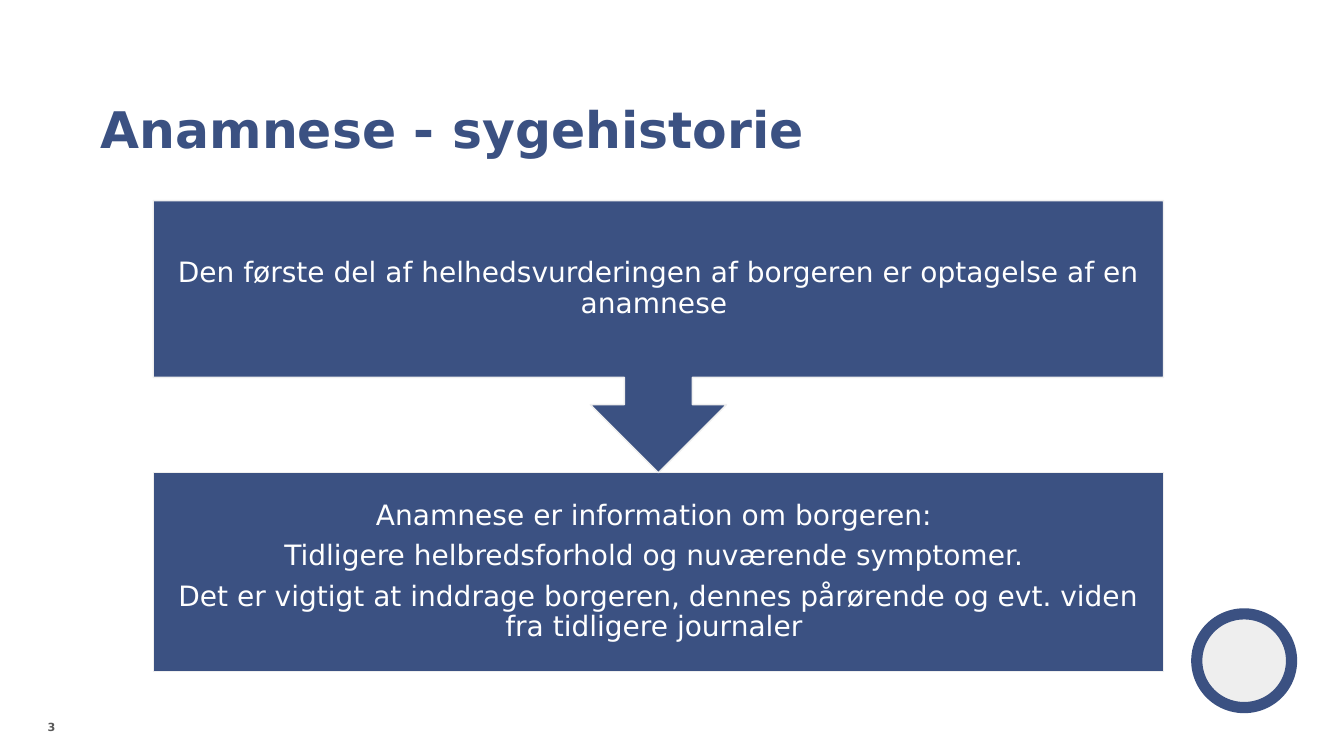
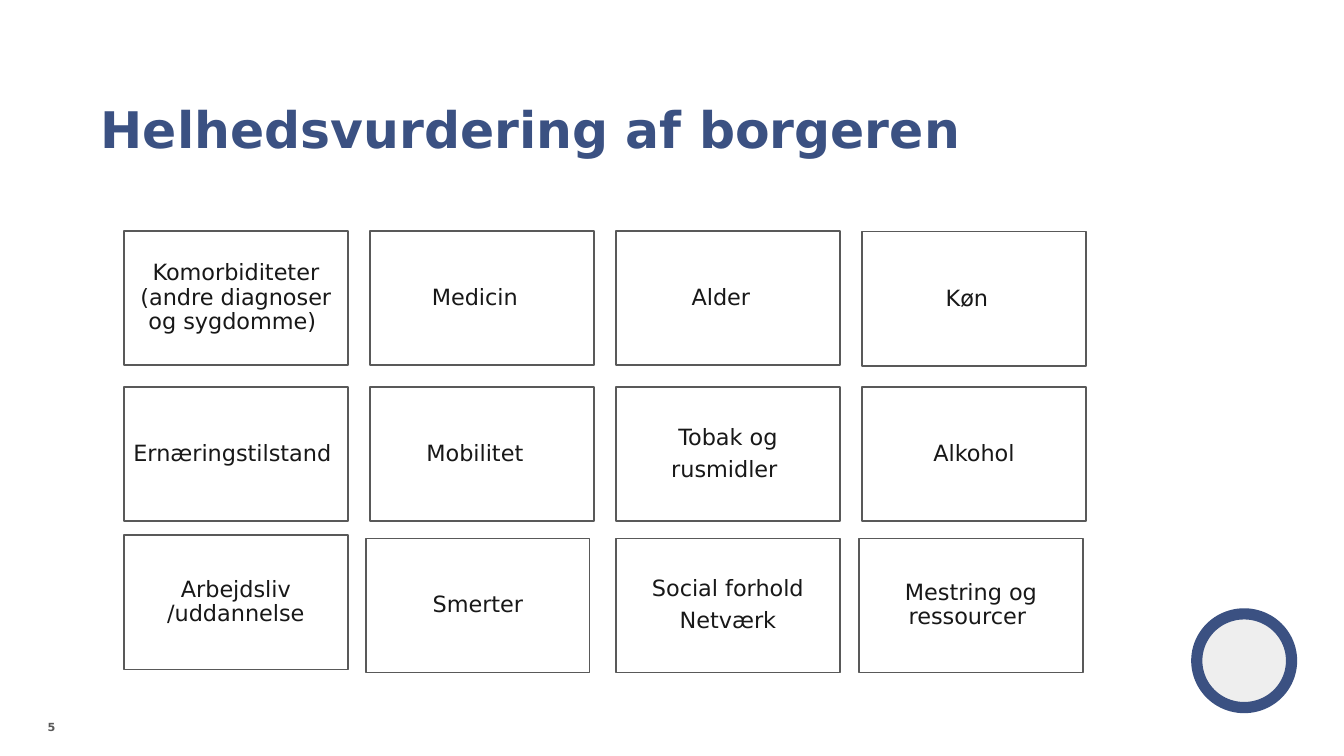
from pptx import Presentation
from pptx.dml.color import RGBColor
from pptx.enum.shapes import MSO_SHAPE as Shape
from pptx.enum.text import MSO_ANCHOR as Anchor, PP_ALIGN as Align
from pptx.util import Inches, Pt

# Shared style
FONT = "DejaVu Sans"
BLUE = RGBColor(0x3B, 0x51, 0x82)
PALE = RGBColor(0xEF, 0xEF, 0xEF)
BADGE = RGBColor(0xEE, 0xEE, 0xEE)
GREY = RGBColor(0x59, 0x59, 0x59)
INK = RGBColor(0x18, 0x18, 0x18)
WHITE = RGBColor(0xFF, 0xFF, 0xFF)

# Slide 1: shape, top, height and paragraphs of each step
HISTORY_TITLE, HISTORY_PAGE = "Anamnese - sygehistorie", "3"
STEP_LEFT, STEP_WIDTH = 1.52, 10.02
STEPS = [
    (Shape.RECTANGLE, 4.69, 1.97, [
        "Anamnese er information om borgeren: ",
        "Tidligere helbredsforhold og nuværende symptomer. ",
        "Det er vigtigt at inddrage borgeren, dennes pårørende og evt. viden "
        "fra tidligere journaler ",
    ]),
    (Shape.DOWN_ARROW_CALLOUT, 1.99, 2.7, [
        "Den første del af helhedsvurderingen af borgeren er optagelse af en "
        "anamnese ",
    ]),
]

# Slide 2: rows of topics, each topic a list of paragraphs
TOPICS_TITLE, TOPICS_PAGE = "Helhedsvurdering af borgeren", "5"
TOPIC_ROWS = [
    (2.29, [["Komorbiditeter (andre diagnoser og sygdomme) "],
            ["Medicin"], ["Alder"], ["Køn"]]),
    (3.84, [["Ernæringstilstand "], ["Mobilitet"],
            ["Tobak og", "rusmidler "], ["Alkohol"]]),
    (5.34, [["Arbejdsliv /uddannelse"], ["Smerter"],
            ["Social forhold", "Netværk"], ["Mestring og ressourcer "]]),
]
CARD_LEFT, CARD_PITCH, CARD_WIDTH, CARD_HEIGHT = 1.23, 2.44, 2.22, 1.33
# Cards placed slightly off the grid: (row, column) -> (right, down)
CARD_OFFSETS = {(0, 3): (0, 0.01), (2, 0): (0, -0.03),
                (2, 1): (-0.04, 0), (2, 3): (-0.03, 0)}
LEFT_OF_CENTRE = {"Medicin", "Alder", "Køn", "Mobilitet"}


def write(shape, paragraphs, size, color, bold=False, align=Align.LEFT,
          anchor=Anchor.TOP, margins=(0, 0, 0, 0), line_spacing=None,
          space_after=0):
    frame = shape.text_frame
    frame.word_wrap = True
    frame.vertical_anchor = anchor
    (frame.margin_left, frame.margin_top,
     frame.margin_right, frame.margin_bottom) = map(Inches, margins)
    for i, text in enumerate(paragraphs):
        para = frame.paragraphs[0] if i == 0 else frame.add_paragraph()
        para.text = text
        para.alignment = align
        para.line_spacing = line_spacing
        para.space_after = Pt(space_after)
        font = para.font
        font.name, font.size, font.bold = FONT, Pt(size), bold
        font.color.rgb = color


def add_shape(slide, kind, box, fill, line, line_width):
    shape = slide.shapes.add_shape(kind, *map(Inches, box))
    shape.shadow.inherit = False
    if fill is None:
        shape.fill.background()
    else:
        shape.fill.solid()
        shape.fill.fore_color.rgb = fill
    shape.line.color.rgb = line
    shape.line.width = Pt(line_width)
    return shape


def add_block(slide, kind, box, paragraphs, size, color, fill, line, margins):
    """A shape with centred text; paragraphs are 35 % of a line apart."""
    block = add_shape(slide, kind, box, fill, line, 1)
    write(block, paragraphs, size, color, align=Align.CENTER,
          anchor=Anchor.MIDDLE, margins=margins, line_spacing=0.9,
          space_after=0.35 * size)


def add_text(slide, box, text, size, color, **style):
    write(slide.shapes.add_textbox(*map(Inches, box)), [text], size, color,
          bold=True, **style)


def add_slide(prs, title, page):
    slide = prs.slides.add_slide(prs.slide_layouts[6])
    add_shape(slide, Shape.OVAL, (11.87, 6.09, 0.94, 0.93), BADGE, BLUE, 8)
    add_text(slide, (1, 0.4, 10.55, 1.18), title, 36, BLUE,
             anchor=Anchor.BOTTOM, line_spacing=0.9)
    add_text(slide, (0.16, 7.15, 0.39, 0.35), page, 8, GREY,
             align=Align.RIGHT)
    return slide


def build_history(prs):
    slide = add_slide(prs, HISTORY_TITLE, HISTORY_PAGE)
    for kind, top, height, paragraphs in STEPS:
        add_block(slide, kind, (STEP_LEFT, top, STEP_WIDTH, height),
                  paragraphs, 20, WHITE, BLUE, PALE, (0.17,) * 4)


def build_topics(prs):
    slide = add_slide(prs, TOPICS_TITLE, TOPICS_PAGE)
    for row, (top, topics) in enumerate(TOPIC_ROWS):
        for col, topic in enumerate(topics):
            right, down = CARD_OFFSETS.get((row, col), (0, 0))
            box = (CARD_LEFT + col * CARD_PITCH + right, top + down,
                   CARD_WIDTH, CARD_HEIGHT)
            shift = 0.07 if topic[0] in LEFT_OF_CENTRE else 0
            margins = (0.07 - shift, 0.07, 0.07 + shift, 0.07)
            add_block(slide, Shape.RECTANGLE, box, topic, 16, INK, None, GREY,
                      margins)


def main():
    prs = Presentation()
    prs.slide_width, prs.slide_height = Inches(13.33), Inches(7.5)
    build_history(prs)
    build_topics(prs)
    prs.save("out.pptx")


if __name__ == "__main__":
    main()
